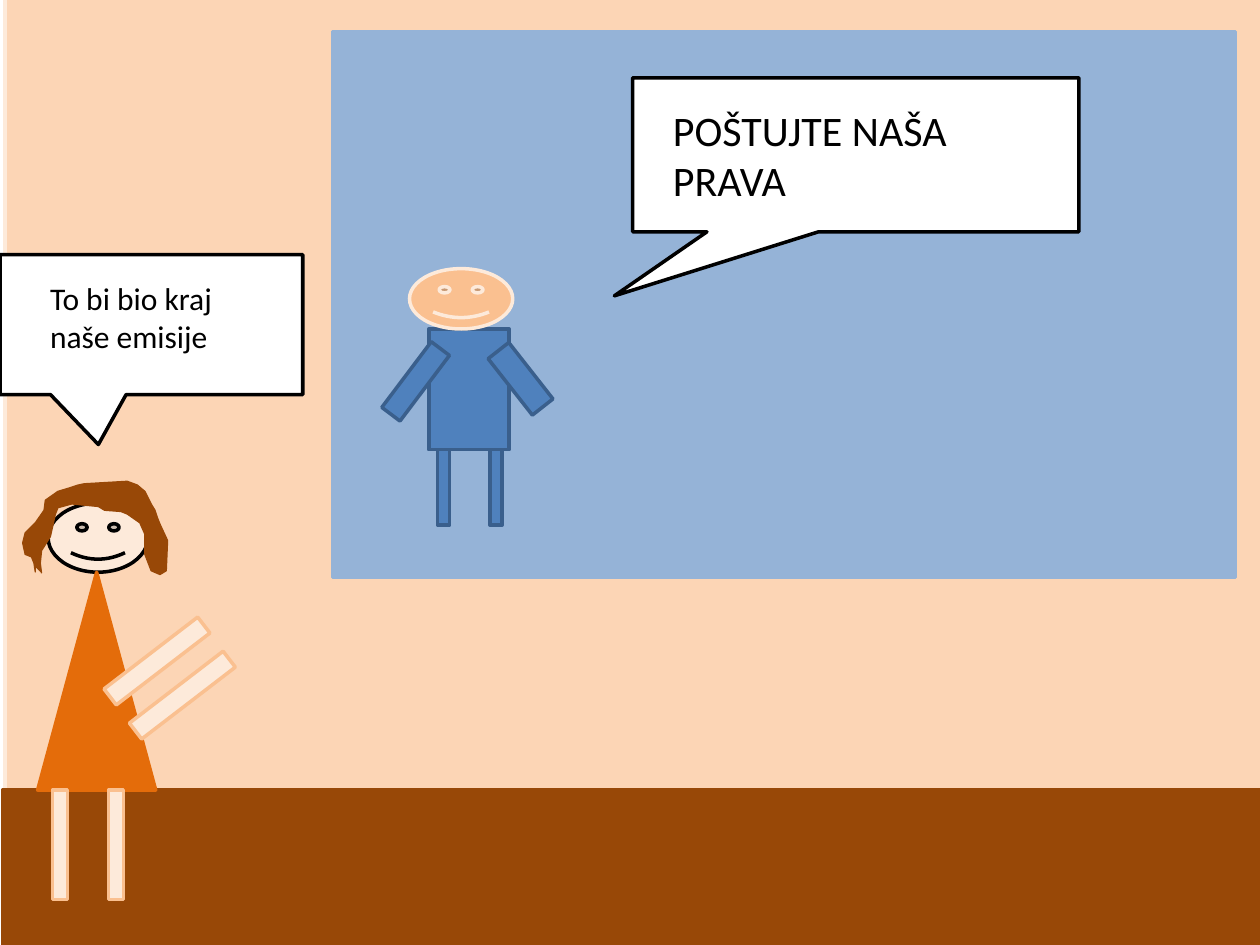
from dataclasses import dataclass

import pptx
import pptx.dml.color
import pptx.enum.shapes
import pptx.enum.text
import pptx.util

Pt = pptx.util.Pt
MSO = pptx.enum.shapes.MSO_SHAPE

SKIN, PEACH, BROWN, ORANGE = "FDEADA", "FAC090", "984807", "E46C0A"
SCREEN, SUIT, SUIT_EDGE = "95B3D7", "4F81BD", "3A5F8C"
BLACK, WHITE = "000000", "FFFFFF"

HAIR = [
    (33, 455), (32, 447), (33, 437), (40, 426), (44, 408), (46, 403),
    (57, 400), (78, 402), (83, 405), (96, 406), (101, 408), (111, 415),
    (115, 424), (115, 440), (120, 453), (127, 456), (132, 453), (133, 429),
    (127, 416), (125, 411), (123, 405), (120, 400), (115, 390), (109, 385),
    (101, 382), (67, 384), (62, 385), (56, 387), (46, 390), (36, 397),
    (35, 405), (28, 415), (20, 423), (18, 431), (20, 440), (25, 442),
    (27, 447), (28, 454), (28, 450),
]


@dataclass
class Part:
    x: float
    y: float
    w: float
    h: float
    fill: str
    line: str
    kind: MSO = MSO.RECTANGLE
    rotation: float = 0
    adjustments: tuple[float, ...] = ()


@dataclass
class Speech:
    bubble: Part
    x: float
    y: float
    w: float
    h: float
    text: str
    size: float


def color(value: str) -> pptx.dml.color.RGBColor:
    return pptx.dml.color.RGBColor.from_string(value)


def paint(sp, fill: str, line: str, width: float = 2) -> None:
    sp.shadow.inherit = False
    sp.fill.solid()
    sp.fill.fore_color.rgb = color(fill)
    sp.line.color.rgb = color(line)
    sp.line.width = Pt(width)


def draw_part(shapes, part: Part) -> None:
    sp = shapes.add_shape(part.kind, Pt(part.x), Pt(part.y), Pt(part.w), Pt(part.h))
    sp.rotation = part.rotation
    for i, value in enumerate(part.adjustments):
        sp.adjustments[i] = value
    paint(sp, part.fill, part.line)


def draw_group(slide, parts: list[Part]):
    shapes = slide.shapes.add_group_shape().shapes
    for part in parts:
        draw_part(shapes, part)
    return shapes


def draw_hair(shapes) -> None:
    builder = shapes.build_freeform(*HAIR[0], scale=Pt(0.72))
    builder.add_line_segments(HAIR[1:], close=False)
    paint(builder.convert_to_shape(), BROWN, BROWN, 0.75)


def draw_speech(slide, speech: Speech) -> None:
    shapes = draw_group(slide, [speech.bubble])
    box = shapes.add_textbox(Pt(speech.x), Pt(speech.y), Pt(speech.w), Pt(speech.h))
    tf = box.text_frame
    tf.word_wrap = True
    tf.auto_size = pptx.enum.text.MSO_AUTO_SIZE.SHAPE_TO_FIT_TEXT
    p = tf.paragraphs[0]
    p.text = speech.text
    p.font.name = "Calibri"
    p.font.size = Pt(speech.size)
    p.font.color.rgb = color(BLACK)


def main() -> None:
    prs = pptx.Presentation()
    prs.slide_width, prs.slide_height = Pt(720), Pt(540)
    slide = prs.slides.add_slide(prs.slide_layouts[6])

    room = [
        Part(3, -1.5, 720, 540, "FCD5B5", SKIN),
        Part(1.5, 451.5, 720, 88.5, BROWN, BROWN),
    ]
    presenter = [
        Part(27.5, 287.5, 57, 39.5, SKIN, BLACK, MSO.SMILEY_FACE),
        Part(21.5, 327, 67.5, 124.5, ORANGE, ORANGE, MSO.ISOSCELES_TRIANGLE),
        *[Part(x, y, 67.5, 11.5, SKIN, PEACH, rotation=322.5)
          for x, y in ((56, 372), (70.5, 391.5))],
        *[Part(x, 451.5, 8.5, 62.5, SKIN, PEACH) for x in (30, 62)],
    ]
    broadcast = [
        Part(190, 18, 516, 312, SCREEN, SCREEN),
        Part(245, 188, 46, 69, SUIT, SUIT_EDGE),
        *[Part(x, 257, 7, 43, SUIT, SUIT_EDGE) for x in (280, 250)],
        Part(231, 194.5, 13, 47, SUIT, SUIT_EDGE, rotation=37),
        Part(290, 196, 15, 41, SUIT, SUIT_EDGE, rotation=321.9),
        Part(234, 153.5, 59, 34.5, PEACH, SKIN, MSO.SMILEY_FACE),
    ]
    speeches = [
        Speech(Part(0, 145.5, 173, 80, WHITE, BLACK, MSO.RECTANGULAR_CALLOUT,
                    adjustments=(-0.175, 0.857)),
               21.5, 156, 134, 51, "To bi bio kraj naše emisije", 18),
        Speech(Part(361.5, 44.5, 255, 88, WHITE, BLACK, MSO.RECTANGULAR_CALLOUT,
                    adjustments=(-0.541, 0.916)),
               377.5, 56, 221, 65.5, "POŠTUJTE NAŠA PRAVA", 24),
    ]

    for part in room:
        draw_part(slide.shapes, part)
    draw_hair(draw_group(slide, presenter))
    draw_group(slide, broadcast)
    for speech in speeches:
        draw_speech(slide, speech)

    prs.save("out.pptx")


if __name__ == "__main__":
    main()
